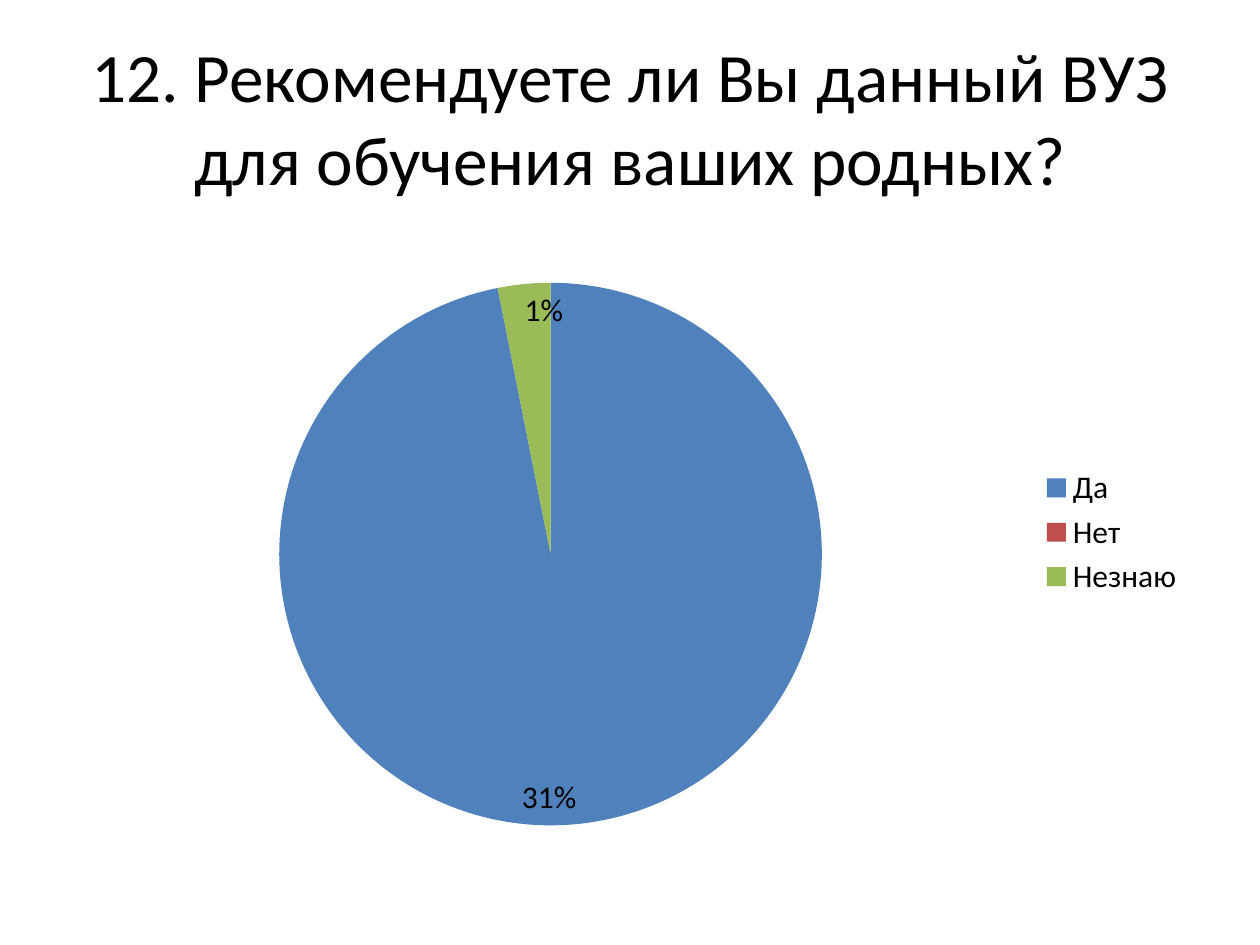
from lxml.etree import SubElement
from pptx import Presentation
from pptx.chart.data import CategoryChartData
from pptx.dml.color import RGBColor
from pptx.enum.chart import XL_CHART_TYPE, XL_LABEL_POSITION, XL_LEGEND_POSITION
from pptx.enum.text import MSO_ANCHOR, PP_ALIGN
from pptx.oxml import parse_xml
from pptx.oxml.ns import nsdecls, qn
from pptx.util import Pt


def rgb(value):
    return RGBColor.from_string(value)


class SlideBuilder:
    """Holds the style and the current slide."""

    font = "Calibri"
    ink = "000000"
    palette = ("4F81BD", "C0504D", "9BBB59")

    def __init__(self, prs):
        self.s = prs.slides.add_slide(prs.slide_layouts[5])
        self.s.background.fill.solid()
        self.s.background.fill.fore_color.rgb = rgb("FFFFFF")

    def style(self, font, size):
        font.name = self.font
        font.size = Pt(size)
        font.color.rgb = rgb(self.ink)

    def title(self, text, x, y, w, h, size):
        sp = self.s.shapes.title
        sp.left, sp.top, sp.width, sp.height = Pt(x), Pt(y), Pt(w), Pt(h)
        tf = sp.text_frame
        tf.word_wrap = True
        tf.vertical_anchor = MSO_ANCHOR.MIDDLE
        p = tf.paragraphs[0]
        p.alignment = PP_ALIGN.CENTER
        r = p.add_run()
        r.text = text
        self.style(r.font, size)

    def pie(self, values, x, y, w, h, size, plot_area):
        data = CategoryChartData(number_format="0%")
        data.categories = list(values)
        data.add_series("Series 1", list(values.values()))
        frame = self.s.shapes.add_chart(
            XL_CHART_TYPE.PIE, Pt(x), Pt(y), Pt(w), Pt(h), data)
        chart = frame.chart
        self.style(chart.font, size)
        chart.has_title = False
        chart.has_legend = True
        chart.legend.position = XL_LEGEND_POSITION.RIGHT
        chart.legend.include_in_layout = False

        plot = chart.plots[0]
        plot.vary_by_categories = True
        series = plot.series[0]
        labels = series.data_labels
        labels.show_value = True
        labels.number_format = "0%"
        labels.number_format_is_linked = False
        labels.position = XL_LABEL_POSITION.INSIDE_END
        self.style(labels.font, size)
        for i, (value, color) in enumerate(zip(values.values(), self.palette)):
            fill = series.points[i].format.fill
            fill.solid()
            fill.fore_color.rgb = rgb(color)
            if not value:
                self.hide_label(series, i)
        self.place_plot(chart, plot_area)

    def hide_label(self, series, index):
        label = parse_xml(
            f'<c:dLbl {nsdecls("c")}><c:idx val="{index}"/>'
            '<c:delete val="1"/></c:dLbl>')
        series.data_labels._element.insert(0, label)

    def place_plot(self, chart, plot_area):
        area = chart._chartSpace.chart.plotArea
        for old in area.findall(qn("c:layout")):
            area.remove(old)
        layout = parse_xml(f'<c:layout {nsdecls("c")}/>')
        manual = SubElement(layout, qn("c:manualLayout"))
        settings = {"layoutTarget": "inner", "xMode": "edge", "yMode": "edge"}
        settings.update(zip("xywh", plot_area))
        for name, value in settings.items():
            SubElement(manual, qn(f"c:{name}")).set("val", str(value))
        area.insert(0, layout)


def main():
    prs = Presentation()
    prs.slide_width, prs.slide_height = Pt(720), Pt(540)
    slide = SlideBuilder(prs)
    slide.title("12. Рекомендуете ли Вы данный ВУЗ для обучения ваших родных?",
                36, 21.6, 648, 90, 39.6)
    slide.pie({"Да": 0.31, "Нет": 0, "Незнаю": 0.01},
              36, 126, 648, 356.4, 18, (0.19, 0.1, 0.48, 0.87))
    prs.save("out.pptx")


if __name__ == "__main__":
    main()
